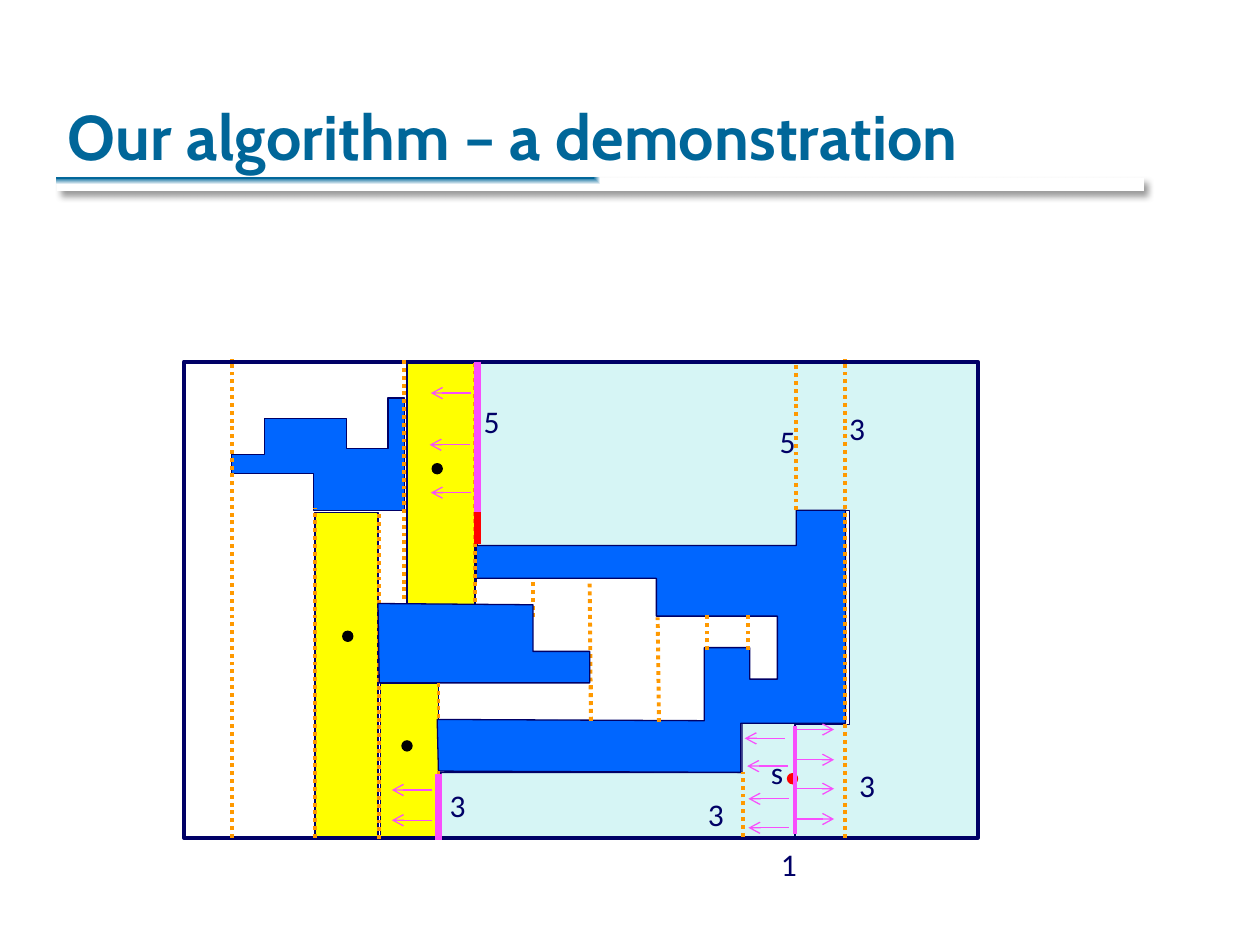
import pptx
import pptx.dml.color
import pptx.enum.dml
import pptx.enum.shapes
import pptx.enum.text
import pptx.oxml
import pptx.oxml.ns
import pptx.util

RGB = pptx.dml.color.RGBColor
NAVY = RGB(0x00, 0x00, 0x66)
TEAL = RGB(0x00, 0x66, 0x99)
BLUE = RGB(0x00, 0x66, 0xFF)
PALE = RGB(0xD6, 0xF5, 0xF5)
YELLOW = RGB(0xFF, 0xFF, 0x00)
ORANGE = RGB(0xFF, 0x99, 0x00)
PINK = RGB(0xF8, 0x4E, 0xFC)
RED = RGB(0xFF, 0x00, 0x00)
BLACK = RGB(0x00, 0x00, 0x00)
WHITE = RGB(0xFF, 0xFF, 0xFF)

PX = 9144
NS = pptx.oxml.ns.nsdecls("a")
RECT = pptx.enum.shapes.MSO_SHAPE.RECTANGLE
OVAL = pptx.enum.shapes.MSO_SHAPE.OVAL


def write_text(tf, text, font="Calibri", size=18, color=NAVY, bold=False, spacing=0):
    p = tf.paragraphs[0]
    r = p.add_run()
    r.text = text
    r.font.name = font
    r.font.size = pptx.util.Pt(size)
    r.font.color.rgb = color
    r.font.bold = bold
    if spacing:
        r.font._element.set("spc", str(spacing))


class Drawing:
    def __init__(self, slide):
        self.s = slide
        self.thin = 0.75

    def paint(self, sp, fill, line, width):
        sp.shadow.inherit = False
        if fill is None:
            sp.fill.background()
        else:
            sp.fill.solid()
            sp.fill.fore_color.rgb = fill
        sp.line.color.rgb = line
        sp.line.width = pptx.util.Pt(width)
        return sp

    def shape(self, kind, x, y, w, h, fill=None, line=NAVY, width=None):
        sp = self.s.shapes.add_shape(kind, x * PX, y * PX, w * PX, h * PX)
        return self.paint(sp, fill, line, width or self.thin)

    def dot(self, x, y, color=BLACK):
        return self.shape(OVAL, x, y, 8, 8, color, color)

    def polygon(self, points, fill, close=False):
        fb = self.s.shapes.build_freeform(*points[0], scale=PX)
        fb.add_line_segments(points[1:], close=close)
        return self.paint(fb.convert_to_shape(), fill, NAVY, self.thin)

    def line(self, x1, y1, x2, y2, color, width, dotted=False, arrow=False):
        kind = pptx.enum.shapes.MSO_CONNECTOR.STRAIGHT
        sp = self.s.shapes.add_connector(kind, x1 * PX, y1 * PX, x2 * PX, y2 * PX)
        sp.line.color.rgb = color
        sp.line.width = pptx.util.Pt(width)
        if dotted:
            sp.line.dash_style = pptx.enum.dml.MSO_LINE.ROUND_DOT
        if arrow:
            sp.line._get_or_add_ln().append(
                pptx.oxml.parse_xml(f'<a:tailEnd {NS} type="arrow"/>'))
        sp._element.spPr.append(pptx.oxml.parse_xml(f"<a:effectLst {NS}/>"))
        return sp

    def wall(self, x, top, bottom, x_top=None):
        x_top = x if x_top is None else x_top
        return self.line(x, bottom, x_top, top, ORANGE, 2.25, dotted=True)

    def arrow(self, x, y, length):
        return self.line(x, y, x + length, y, PINK, self.thin, arrow=True)

    def text(self, text, x, y, w=33, h=40, anchor="TOP", wrap=False, **style):
        tf = self.s.shapes.add_textbox(x * PX, y * PX, w * PX, h * PX).text_frame
        tf.word_wrap = wrap
        tf.vertical_anchor = pptx.enum.text.MSO_ANCHOR[anchor]
        write_text(tf, text, **style)
        return tf

    def title_rule(self, x, y, w, h):
        sp = self.shape(RECT, x, y, w, h, WHITE)
        sp.line.fill.background()
        spPr = sp._element.spPr
        solid = spPr.find(pptx.oxml.ns.qn("a:solidFill"))
        spPr.replace(solid, pptx.oxml.parse_xml(
            f'<a:gradFill {NS} rotWithShape="0"><a:gsLst>'
            f'<a:gs pos="0"><a:srgbClr val="{TEAL}"/></a:gs>'
            f'<a:gs pos="100000"><a:srgbClr val="{WHITE}"/></a:gs></a:gsLst>'
            '<a:path path="rect"><a:fillToRect r="100000" b="100000"/></a:path>'
            '</a:gradFill>'))
        effects = spPr.find(pptx.oxml.ns.qn("a:effectLst"))
        effects.append(pptx.oxml.parse_xml(
            f'<a:outerShdw {NS} blurRad="50800" dist="38100" dir="2700000" rotWithShape="0">'
            f'<a:srgbClr val="{BLACK}"><a:alpha val="40000"/></a:srgbClr></a:outerShdw>'))


def main():
    prs = pptx.Presentation()
    prs.slide_width = pptx.util.Inches(10)
    prs.slide_height = pptx.util.Inches(7.5)
    d = Drawing(prs.slides.add_slide(prs.slide_layouts[6]))

    d.title_rule(45, 141, 863, 11)
    d.polygon([(348, 613), (589, 613), (589, 574), (632, 574), (632, 665),
               (349, 665), (350, 613)], PALE)
    d.polygon([(631, 665), (631, 575), (674, 575), (674, 405), (633, 405), (633, 436),
               (379, 436), (379, 288), (777, 288), (777, 665)], PALE, close=True)
    for box in [(302, 542, 46, 124), (323, 288, 54, 193), (250, 407, 50, 259)]:
        d.shape(RECT, *box, fill=YELLOW)
    d.text("Our algorithm – a demonstration", 44, 17, 850, 125, anchor="BOTTOM", wrap=True,
           font="Cabin", size=36, color=TEAL, bold=True, spacing=10)
    d.shape(RECT, 146, 287, 630, 378, width=2.25)

    d.polygon([(184, 359), (184, 376), (249, 376), (249, 405), (321, 405), (321, 316),
               (308, 316), (308, 356), (275, 356), (275, 332), (210, 332), (210, 361),
               (184, 361)], BLUE)
    d.polygon([(377, 443), (377, 459), (521, 459), (521, 489), (617, 489), (617, 539),
               (595, 539), (595, 514), (559, 514), (559, 572), (347, 571), (348, 612),
               (588, 613), (588, 574), (671, 574), (671, 405), (632, 405), (632, 433),
               (378, 433), (378, 462)], BLUE)
    for wall in [(377, 287, 490), (321, 285, 488), (671, 285, 665), (184, 285, 665),
                 (301, 405, 666), (250, 403, 665), (348, 612, 665), (590, 613, 664),
                 (469, 462, 572, 468), (523, 490, 573, 522), (423, 462, 490),
                 (561, 488, 516), (594, 488, 516), (632, 287, 405)]:
        d.wall(*wall)
    d.polygon([(300, 479), (423, 480), (423, 517), (468, 517), (468, 542), (301, 542)],
              BLUE, close=True)
    d.wall(348, 541, 570)
    d.wall(469, 543, 572)

    for x, y in [(319, 588), (272, 501), (343, 368)]:
        d.dot(x, y)
    d.text("s", 602, 593, w=30)
    d.dot(625, 614, RED)

    d.line(631, 576, 631, 662, PINK, 2.25)
    for y in (579, 603, 626, 650):
        d.arrow(632, y, 30)
    for x, y in [(623, 586), (625, 608), (626, 634), (626, 657),
                 (373, 353), (374, 391), (374, 312), (343, 651), (343, 627)]:
        d.arrow(x, y, -32)

    for x, top, bottom, color in [(379, 288, 432, RED), (379, 287, 406, PINK),
                                  (348, 614, 665, RED), (348, 614, 667, PINK)]:
        d.line(x, top, x, bottom, color, 4.5)
    for label, x, y in [("1", 610, 666), ("5", 374, 314), ("5", 609, 330), ("3", 664, 320),
                        ("3", 672, 603), ("3", 552, 626), ("3", 347, 619)]:
        d.text(label, x, y)

    prs.save("out.pptx")


if __name__ == "__main__":
    main()
